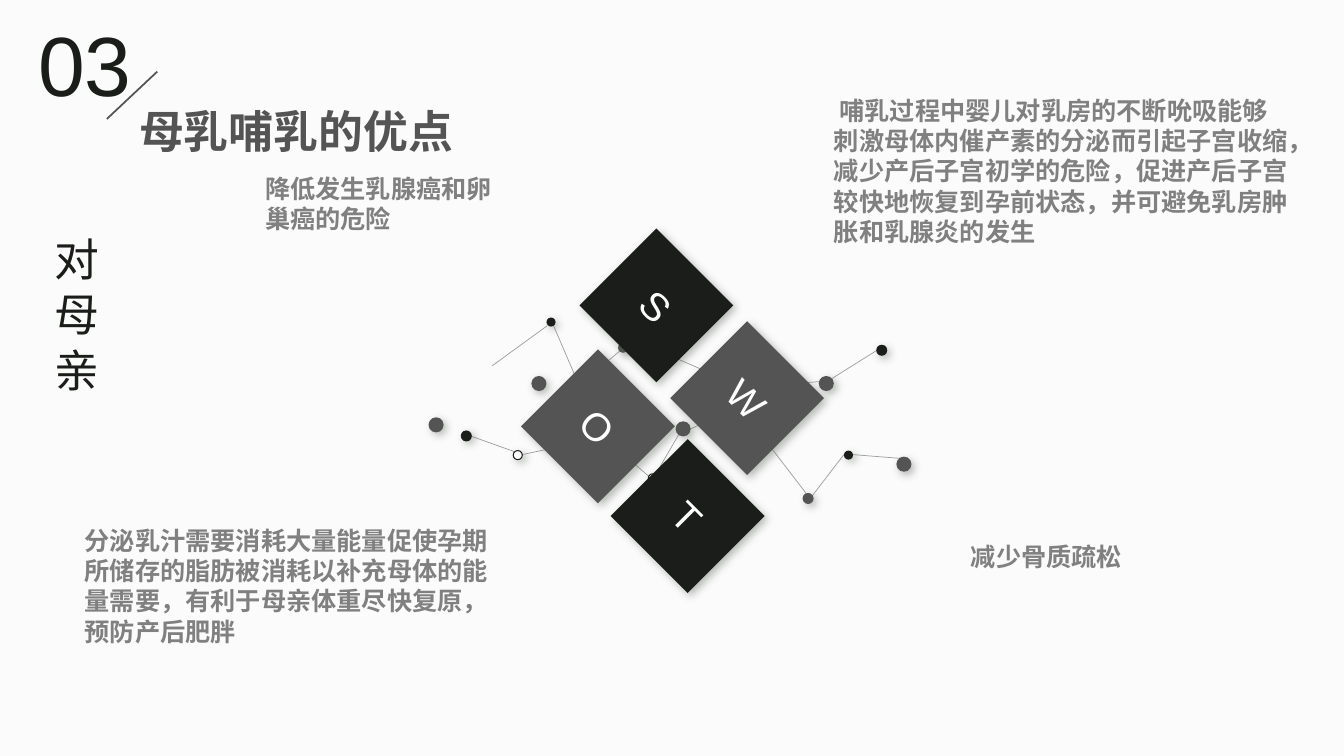
from lxml import etree
from pptx import Presentation
from pptx.dml.color import RGBColor
from pptx.enum.shapes import MSO_CONNECTOR, MSO_SHAPE
from pptx.enum.text import MSO_ANCHOR, MSO_AUTO_SIZE, PP_ALIGN
from pptx.oxml.ns import qn
from pptx.util import Inches, Pt

STRAIGHT = MSO_CONNECTOR.STRAIGHT
OVAL, RECT = MSO_SHAPE.OVAL, MSO_SHAPE.RECTANGLE
TOP, MIDDLE = MSO_ANCHOR.TOP, MSO_ANCHOR.MIDDLE
LEFT, CENTER, JUSTIFY = PP_ALIGN.LEFT, PP_ALIGN.CENTER, PP_ALIGN.JUSTIFY
GROW = MSO_AUTO_SIZE.SHAPE_TO_FIT_TEXT
DARK, GRAY, PALE, BODY, WHITE = "1A1D1A", "545454", "FBFBFB", "808080", "FFFFFF"

# Network lines: x1, y1, x2, y2 inside the diagram box
LINKS = [
    (3.78, 1.88, 3.58, 2.31), (4.2, 1.78, 3.82, 1.81), (4.18, 1.8, 4.69, 1.48),
    (3.07, 2.15, 2.8, 2.28), (1.18, 2.51, 1.93, 2.35), (0.68, 2.33, 1.1, 2.48),
    (2.44, 2.73, 1.97, 2.32), (2.5, 2.71, 2.75, 2.28), (3.02, 1.68, 3.14, 2.12),
    (3.18, 2.11, 3.55, 2.35), (4.46, 2.51, 4.96, 2.55), (4.04, 2.94, 4.37, 2.51),
    (4.03, 2.94, 3.57, 2.34), (2.15, 1.44, 2.59, 1.47), (2.15, 1.48, 1.77, 1.8),
    (2.65, 1.53, 2.97, 1.67), (0.88, 1.63, 1.43, 1.23), (1.73, 1.79, 1.49, 1.23),
]
# Network dots: left, top, diameter, fill inside the diagram box
DOTS = [
    (4.69, 1.42, 0.11, DARK), (4.12, 1.73, 0.15, GRAY), (4.37, 2.47, 0.09, DARK),
    (3.76, 1.79, 0.11, DARK), (4.89, 2.53, 0.15, GRAY), (2.97, 1.62, 0.09, PALE),
    (3.96, 2.89, 0.11, GRAY), (3.46, 2.27, 0.15, GRAY), (0.25, 2.14, 0.15, GRAY),
    (1.27, 1.73, 0.15, GRAY), (1.09, 2.47, 0.09, PALE), (1.42, 1.15, 0.09, DARK),
    (1.68, 1.79, 0.11, DARK), (0.57, 2.27, 0.11, DARK), (2.58, 1.46, 0.09, PALE),
    (2.13, 1.4, 0.1, GRAY), (2.43, 2.7, 0.09, PALE), (2.33, 2.07, 0.12, GRAY),
    (1.93, 2.27, 0.15, GRAY), (2.7, 2.18, 0.15, GRAY), (3.09, 2.07, 0.13, PALE),
]
# Diamonds: letter, left, top, fill inside the diagram box
DIAMOND_SIZE = 1.08
DIAMONDS = [("W", 2.87, 1.41, GRAY), ("T", 2.28, 2.58, DARK),
            ("S", 1.97, 0.49, DARK), ("O", 1.39, 1.69, GRAY)]
# Benefits: box and lines of text
BENEFITS = [
    ((8.27, 0.78, 4.8, 1.83), [
        " 哺乳过程中婴儿对乳房的不断吮吸能够",
        "刺激母体内催产素的分泌而引起子宫收缩，",
        "减少产后子宫初学的危险，促进产后子宫",
        "较快地恢复到孕前状态，并可避免乳房肿",
        "胀和乳腺炎的发生"]),
    ((2.63, 1.44, 2.4, 1.16), ["降低发生乳腺癌和卵", "巢癌的危险"]),
    ((9.63, 5.26, 1.85, 0.52), ["减少骨质疏松"]),
    ((0.84, 5, 4.31, 1.62), [
        "分泌乳汁需要消耗大量能量促使孕期",
        "所储存的脂肪被消耗以补充母体的能",
        "量需要，有利于母亲体重尽快复原，",
        "预防产后肥胖"]),
]


def color(value):
    return RGBColor.from_string(value)


def add_line(s, x1, y1, x2, y2, ink, width, alpha=None):
    line = s.shapes.add_connector(STRAIGHT, *map(Inches, (x1, y1, x2, y2)))
    line.line.color.rgb = color(ink)
    line.line.width = Pt(width)
    sp_pr = line._element.spPr
    if alpha:
        clr = next(sp_pr.iter(qn("a:srgbClr")))
        etree.SubElement(clr, qn("a:alpha"), val=str(alpha * 1000))
    etree.SubElement(sp_pr, qn("a:effectLst"))


def add_shadowed(s, kind, x, y, size, fill):
    sp = s.shapes.add_shape(kind, *map(Inches, (x, y, size, size)))
    sp.fill.solid()
    sp.fill.fore_color.rgb = color(fill)
    if fill == PALE:
        sp.line.color.rgb = color(DARK)
        sp.line.width = Pt(0.75)
    else:
        sp.line.fill.background()
    sp.shadow.inherit = False
    effects = sp._element.spPr.find(qn("a:effectLst"))
    shadow = etree.SubElement(effects, qn("a:outerShdw"), blurRad=str(Pt(6)),
                              dist=str(Pt(3)), dir="2700000", rotWithShape="0")
    clr = etree.SubElement(shadow, qn("a:srgbClr"), val="505950")
    etree.SubElement(clr, qn("a:alpha"), val="40000")
    return sp


def write(sp, lines, size, ink, font="Arial", bold=False, align=LEFT, anchor=TOP):
    tf = sp.text_frame
    tf.word_wrap = True
    tf.vertical_anchor = anchor
    tf.text = "\n".join(lines)
    for p in tf.paragraphs:
        p.alignment = align
        p.font.name = font
        p.font.size = Pt(size)
        p.font.bold = bold
        p.font.color.rgb = color(ink)
    return tf


def add_text(s, box, lines, size, ink, **style):
    return write(s.shapes.add_textbox(*map(Inches, box)), lines, size, ink, **style)


def add_diagram(s, left, top):
    for x1, y1, x2, y2 in LINKS:
        add_line(s, left + x1, top + y1, left + x2, top + y2, DARK, 0.5, alpha=41)
    for x, y, size, fill in DOTS:
        add_shadowed(s, OVAL, left + x, top + y, size, fill)
    for letter, x, y, fill in DIAMONDS:
        sp = add_shadowed(s, RECT, left + x, top + y, DIAMOND_SIZE, fill)
        sp.rotation = 45
        write(sp, [letter], 28, WHITE, align=CENTER, anchor=MIDDLE)


def add_heading(s, left, top):
    # Section number and slash
    tf = add_text(s, (left, top, 1.14, 1.11), ["03"], 60, DARK, align=JUSTIFY)
    tf.auto_size = GROW
    add_line(s, left + 1.28, top + 0.64, left + 0.78, top + 1.11, GRAY, 1.25)
    # Title
    title = s.shapes.title
    title.left, title.top = Inches(left + 1), Inches(top + 0.75)
    title.width, title.height = Inches(4.78), Inches(0.73)
    tf = write(title, ["母乳哺乳的优点"], 32, GRAY, bold=True)
    tf.auto_size = GROW
    p = tf.paragraphs[0]
    p.line_spacing = 1.3
    p.space_before = Pt(0)


def add_side_label(s, box):
    tf = add_text(s, box, ["对 母 亲"], 32, DARK, font="Noto Sans CJK SC")
    tf.auto_size = GROW
    tf._txBody.bodyPr.set("vert", "eaVert")


def add_benefit(s, box, lines):
    tf = add_text(s, box, lines, 18, BODY, bold=True, anchor=MIDDLE)
    tf.margin_left = tf.margin_right = tf.margin_top = tf.margin_bottom = 0


def main():
    prs = Presentation()
    prs.slide_width, prs.slide_height = Inches(13.33), Inches(7.5)
    s = prs.slides.add_slide(prs.slide_layouts[5])
    s.background.fill.solid()
    s.background.fill.fore_color.rgb = color(PALE)
    add_diagram(s, 4, 2)
    add_heading(s, 0.28, 0.07)
    add_side_label(s, (0.32, 2.25, 0.74, 1.93))
    for box, lines in BENEFITS:
        add_benefit(s, box, lines)
    prs.save("out.pptx")


if __name__ == "__main__":
    main()
